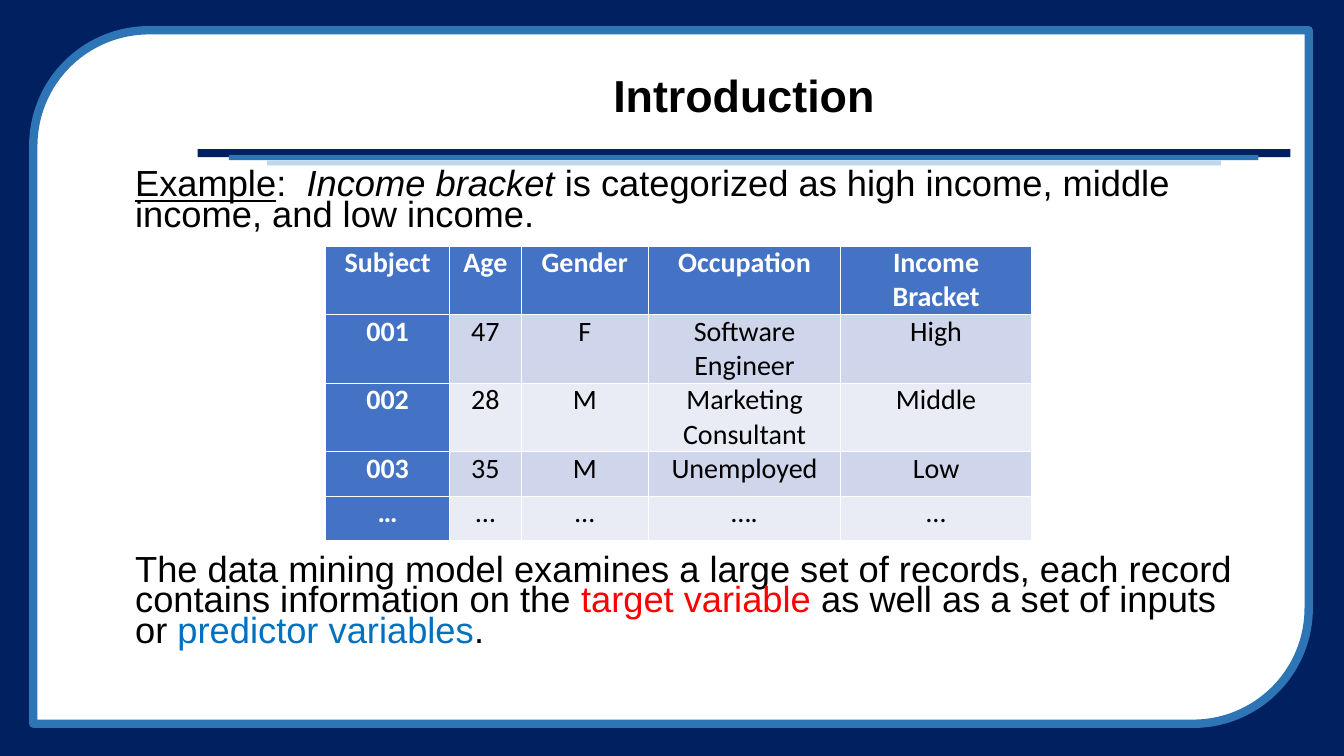
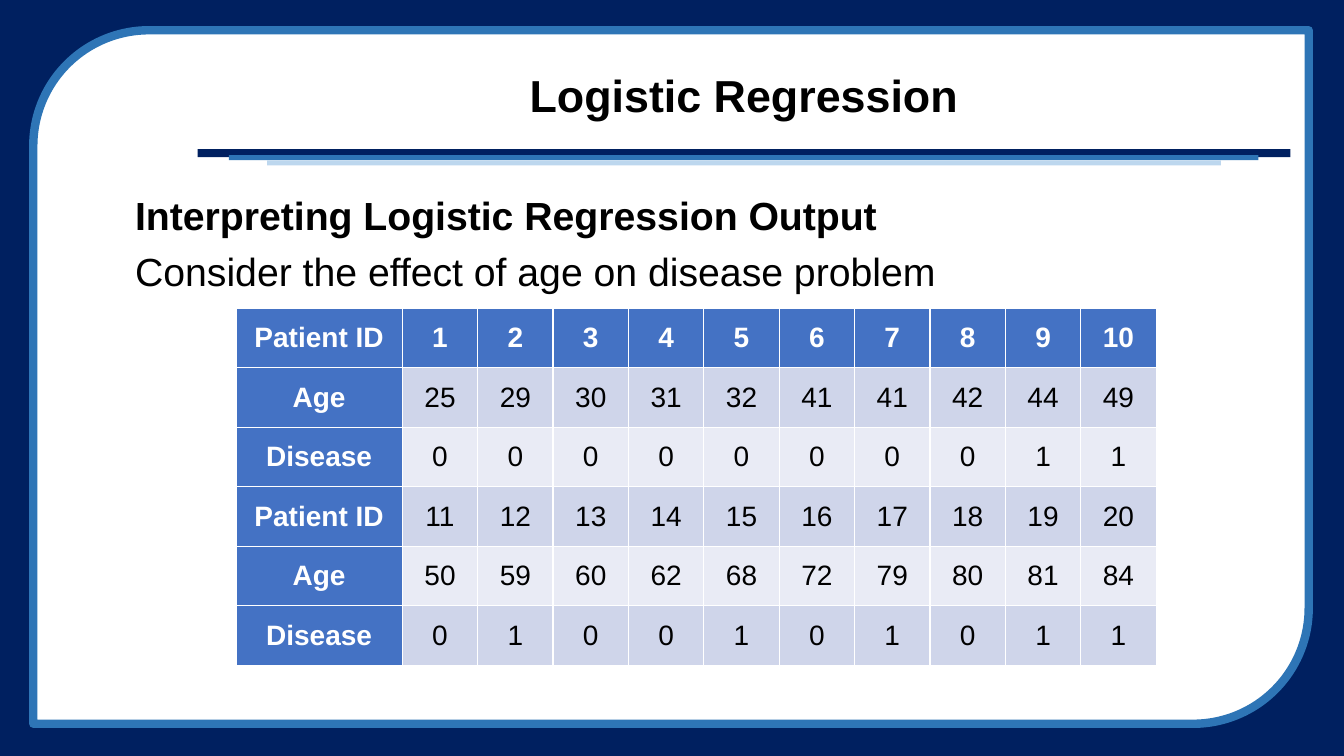
from dataclasses import dataclass
from typing import Optional

from lxml import etree
from pptx import Presentation
from pptx.dml.color import RGBColor
from pptx.enum import shapes, text
from pptx.oxml.ns import qn
from pptx.util import Inches, Pt

NAVY, BLUE, PALE = "002060", "2E75B6", "BDD7EE"
WHITE, BLACK, RED, SKY = "FFFFFF", "000000", "FF0000", "0070C0"
HEADER, ROW_DARK, ROW_LIGHT = "4472C4", "CFD5EA", "E9EBF5"


@dataclass(frozen=True)
class Area:
    left: float
    top: float
    width: float
    height: float


@dataclass(frozen=True)
class Panel:
    area: Area
    fill: str
    kind: shapes.MSO_SHAPE = shapes.MSO_SHAPE.RECTANGLE
    line: Optional[str] = None
    rotation: int = 0


@dataclass(frozen=True)
class Span:
    words: str
    color: str = BLACK
    bold: bool = False
    italic: bool = False
    underline: bool = False


@dataclass(frozen=True)
class Para:
    spans: list[Span]
    space_before: float = 0


@dataclass(frozen=True)
class Grid:
    left: float
    top: float
    widths: list[float]
    heights: list[float]
    rows: list[list[str]]
    font: str
    anchor: text.MSO_ANCHOR


@dataclass(frozen=True)
class Page:
    title: str
    body: Area
    size: float
    line_spacing: float
    paras: list[Para]
    grid: Grid


TITLE_AREA = Area(1.96, 0.49, 10.84, 0.97)
BACKDROP = [
    Panel(Area(0, 0, 13.33, 7.5), NAVY),
    Panel(Area(0.33, 0.3, 12.65, 6.88), WHITE,
          shapes.MSO_SHAPE.ROUND_2_DIAG_RECTANGLE, BLUE, 180),
    Panel(Area(1.96, 1.48, 10.84, 0.08), NAVY),
    Panel(Area(2.27, 1.54, 10.21, 0.05), BLUE),
    Panel(Area(2.65, 1.59, 9.46, 0.05), PALE),
]

PAGES = [
    Page(
        "Introduction", Area(1.24, 1.66, 11.34, 4.95), 25.9, 0.7,
        [
            Para([
                Span("Example", underline=True),
                Span(":  "),
                Span("Income bracket", italic=True),
                Span(" is categorized as high income, middle income, and low income."),
            ]),
            Para([
                Span("The data mining model examines a large set of records, "
                     "each record contains information on the "),
                Span("target variable ", RED),
                Span("as well as a set of inputs or "),
                Span("predictor variables", SKY),
                Span("."),
            ], 232),
        ],
        Grid(
            3.23, 2.44, [1.23, 0.71, 1.26, 1.91, 1.89], [0.68] * 3 + [0.44] * 2,
            [
                ["Subject", "Age", "Gender", "Occupation", "Income Bracket"],
                ["001", "47", "F", "Software Engineer", "High"],
                ["002", "28", "M", "Marketing Consultant", "Middle"],
                ["003", "35", "M", "Unemployed", "Low"],
                ["…", "…", "…", "….", "…"],
            ],
            "Calibri", text.MSO_ANCHOR.TOP,
        ),
    ),
    Page(
        "Logistic Regression", Area(1.24, 1.9, 11.34, 4.71), 28, 0.9,
        [
            Para([Span("Interpreting Logistic Regression Output", bold=True)]),
            Para([Span("Consider the effect of age on disease problem")], 10),
        ],
        Grid(
            2.34, 3.06, [1.65] + [(9.13 - 1.65) / 10] * 10, [0.59] * 6,
            [
                ["Patient ID", *map(str, range(1, 11))],
                ["Age", *"25 29 30 31 32 41 41 42 44 49".split()],
                ["Disease", *"0000000011"],
                ["Patient ID", *map(str, range(11, 21))],
                ["Age", *"50 59 60 62 68 72 79 80 81 84".split()],
                ["Disease", *"0100101011"],
            ],
            "Arial", text.MSO_ANCHOR.MIDDLE,
        ),
    ),
]


def rgb(color: str) -> RGBColor:
    return RGBColor.from_string(color)


def place(box, area: Area) -> None:
    box.left, box.top = Inches(area.left), Inches(area.top)
    box.width, box.height = Inches(area.width), Inches(area.height)


def add_span(paragraph, span: Span, size: float, font: str = "Arial") -> None:
    run = paragraph.add_run()
    run.text = span.words
    run.font.name, run.font.size = font, Pt(size)
    run.font.bold, run.font.italic = span.bold, span.italic
    run.font.underline = span.underline
    run.font.color.rgb = rgb(span.color)


def add_panel(slide, panel: Panel):
    area = panel.area
    box = slide.shapes.add_shape(
        panel.kind, Inches(area.left), Inches(area.top),
        Inches(area.width), Inches(area.height))
    box.shadow.inherit = False
    box.rotation = panel.rotation
    box.fill.solid()
    box.fill.fore_color.rgb = rgb(panel.fill)
    if panel.line:
        box.line.color.rgb = rgb(panel.line)
        box.line.width = Pt(6)
    else:
        box.line.fill.background()
    return box


def move_backdrop_to_layout(slide, layout) -> None:
    for index, panel in enumerate(BACKDROP, start=2):
        layout.shapes.element.insert(index, add_panel(slide, panel).element)


def fill_title(box, words: str) -> None:
    frame = box.text_frame
    frame.vertical_anchor = text.MSO_ANCHOR.MIDDLE
    frame.auto_size = text.MSO_AUTO_SIZE.NONE
    paragraph = frame.paragraphs[0]
    paragraph.alignment = text.PP_ALIGN.CENTER
    paragraph.line_spacing = 0.9
    add_span(paragraph, Span(words, bold=True), 32)


def fill_body(box, page: Page) -> None:
    place(box, page.body)
    frame = box.text_frame
    frame.auto_size = text.MSO_AUTO_SIZE.NONE
    for index, para in enumerate(page.paras):
        paragraph = frame.add_paragraph() if index else frame.paragraphs[0]
        properties = paragraph._p.get_or_add_pPr()
        properties.set("marL", "0")
        properties.set("indent", "0")
        etree.SubElement(properties, qn("a:buNone"))
        paragraph.alignment = text.PP_ALIGN.LEFT
        paragraph.line_spacing = page.line_spacing
        paragraph.space_before = Pt(para.space_before)
        for span in para.spans:
            add_span(paragraph, span, page.size)


def add_grid(slide, grid: Grid) -> None:
    table = slide.shapes.add_table(
        len(grid.rows), len(grid.widths), Inches(grid.left), Inches(grid.top),
        Inches(sum(grid.widths)), Inches(sum(grid.heights))).table
    table.first_col = True
    for column, width in zip(table.columns, grid.widths):
        column.width = Inches(width)
    for row, height in zip(table.rows, grid.heights):
        row.height = Inches(height)
    for row_index, row in enumerate(grid.rows):
        for column_index, words in enumerate(row):
            cell = table.cell(row_index, column_index)
            heading = row_index == 0 or column_index == 0
            band = ROW_DARK if row_index % 2 else ROW_LIGHT
            cell.fill.solid()
            cell.fill.fore_color.rgb = rgb(HEADER if heading else band)
            cell.margin_left = cell.margin_right = Inches(0.07)
            cell.margin_top = cell.margin_bottom = 0
            cell.vertical_anchor = grid.anchor
            paragraph = cell.text_frame.paragraphs[0]
            paragraph.alignment = text.PP_ALIGN.CENTER
            span = Span(words, WHITE if heading else BLACK, heading)
            add_span(paragraph, span, 20, grid.font)


def main() -> None:
    deck = Presentation()
    deck.slide_width, deck.slide_height = Inches(13.33), Inches(7.5)
    layout = deck.slide_layouts[1]
    place(layout.placeholders[0], TITLE_AREA)
    for index, page in enumerate(PAGES):
        slide = deck.slides.add_slide(layout)
        if index == 0:
            move_backdrop_to_layout(slide, layout)
        fill_title(slide.shapes.title, page.title)
        fill_body(slide.placeholders[1], page)
        add_grid(slide, page.grid)
    deck.save("out.pptx")


if __name__ == "__main__":
    main()
